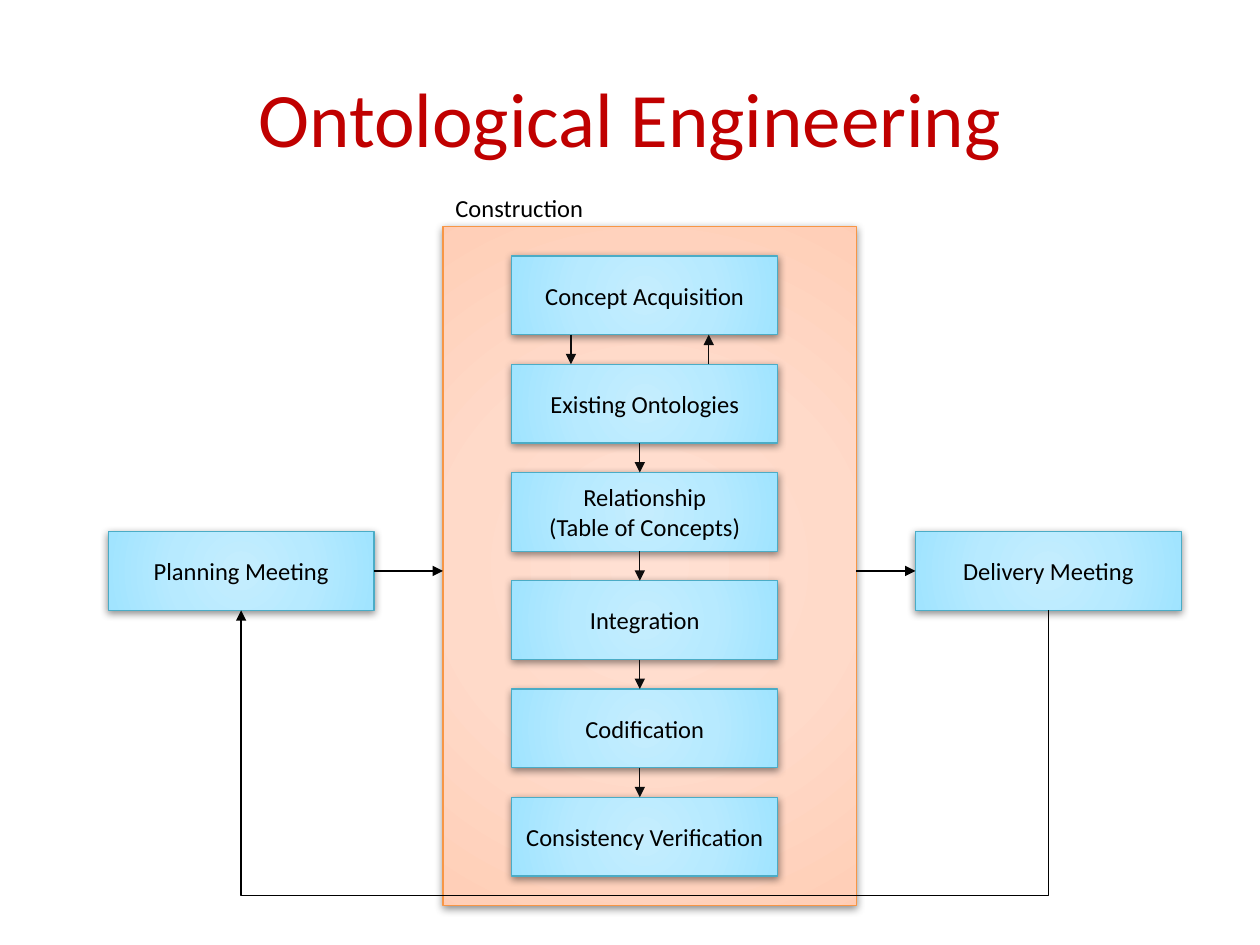
import pptx
import pptx.dml.color
import pptx.enum.shapes
import pptx.enum.text
import pptx.oxml
import pptx.oxml.ns
import pptx.util
import lxml.etree

# A grid of square cells, 128 columns by 96 rows, covers the slide
COLUMNS, ROWS = 128, 96
CELL = pptx.util.Inches(10) / COLUMNS
BOX_COLUMNS, BOX_ROWS, STEP_PITCH = 27, 8, 11
FONT = "Calibri"
BLUE_STOPS = [(0, "C5EDFE"), (50, "B7EAFF"), (97, "A1E4FF"), (100, "9BE3FF")]
PEACH_STOPS = [(0, "FFE0D3"), (50, "FFDAC9"), (97, "FFCFB8"), (100, "FFCBB3")]
STEPS = [
    ["Concept Acquisition"],
    ["Existing Ontologies"],
    ["Relationship", "(Table of Concepts)"],
    ["Integration"],
    ["Codification"],
    ["Consistency Verification"],
]


def grid(*cells):
    return [pptx.util.Emu(round(cell * CELL)) for cell in cells]


def color(value):
    return pptx.dml.color.RGBColor.from_string(value)


def add_child(parent, tag, **attributes):
    child = lxml.etree.SubElement(parent, pptx.oxml.ns.qn(tag))
    for name, value in attributes.items():
        child.set(name, str(value))
    return child


def set_line(shape, line_color):
    shape.line.color.rgb = color(line_color)
    shape.line.width = pptx.util.Pt(0.75)


def set_radial_fill(shape, stops):
    shape.fill.solid()
    properties = shape._element.spPr
    solid = properties.find(pptx.oxml.ns.qn("a:solidFill"))
    gradient = lxml.etree.Element(pptx.oxml.ns.qn("a:gradFill"), rotWithShape="1")
    stop_list = add_child(gradient, "a:gsLst")
    for position, value in stops:
        stop = add_child(stop_list, "a:gs", pos=position * 1000)
        add_child(stop, "a:srgbClr", val=value)
    path = add_child(gradient, "a:path", path="circle")
    add_child(path, "a:fillToRect", l=50000, t=50000, r=50000, b=50000)
    properties.replace(solid, gradient)


def set_soft_shadow(shape):
    shape.shadow.inherit = False
    effects = shape._element.spPr.find(pptx.oxml.ns.qn("a:effectLst"))
    shadow = add_child(effects, "a:outerShdw", blurRad=pptx.util.Pt(4.5),
                       dist=pptx.util.Pt(1.5), dir=5400000, algn="ctr", rotWithShape=0)
    add_child(add_child(shadow, "a:srgbClr", val="000000"), "a:alpha", val=43000)


def write_text(shape, lines, size, text_color, align):
    frame = shape.text_frame
    for index, line in enumerate(lines):
        paragraph = frame.add_paragraph() if index else frame.paragraphs[0]
        paragraph.alignment = align
        run = paragraph.add_run()
        run.text = line
        run.font.name = FONT
        run.font.size = pptx.util.Pt(size)
        run.font.color.rgb = color(text_color)


def add_panel(slide, box, stops, line_color):
    shape = slide.shapes.add_shape(pptx.enum.shapes.MSO_SHAPE.RECTANGLE, *grid(*box))
    set_radial_fill(shape, stops)
    set_line(shape, line_color)
    set_soft_shadow(shape)
    return shape


def add_box(slide, left, top, lines):
    shape = add_panel(slide, (left, top, BOX_COLUMNS, BOX_ROWS), BLUE_STOPS, "4BACC6")
    shape.text_frame.word_wrap = True
    shape.text_frame.vertical_anchor = pptx.enum.text.MSO_ANCHOR.MIDDLE
    write_text(shape, lines, 14, "000000", pptx.enum.text.PP_ALIGN.CENTER)
    return shape


def add_arrowhead(shape):
    add_child(shape.line._get_or_add_ln(), "a:tailEnd", type="triangle")


def add_arrow(slide, start, end, line_color):
    arrow = slide.shapes.add_connector(
        pptx.enum.shapes.MSO_CONNECTOR.STRAIGHT, *grid(*start, *end))
    set_line(arrow, line_color)
    add_arrowhead(arrow)
    add_child(arrow._element.spPr, "a:effectLst")
    return arrow


def add_title(slide, box):
    title = slide.shapes.add_textbox(*grid(*box))
    title.text_frame.word_wrap = True
    title.text_frame.vertical_anchor = pptx.enum.text.MSO_ANCHOR.MIDDLE
    write_text(title, ["Ontological Engineering"], 44, "C00000",
               pptx.enum.text.PP_ALIGN.CENTER)


def add_construction(slide, box):
    left, top, width, height = box
    add_panel(slide, box, PEACH_STOPS, "F79646")

    # Label above the panel
    label = slide.shapes.add_textbox(*grid(left, top - 4, 15.7, 4.3))
    label.text_frame.word_wrap = False
    write_text(label, ["Construction"], 14, "000000", pptx.enum.text.PP_ALIGN.LEFT)

    # Column of steps
    tops = [top + 3 + STEP_PITCH * index for index in range(len(STEPS))]
    for step_top, lines in zip(tops, STEPS):
        add_box(slide, left + 7, step_top, lines)

    # Two-way exchange between the first steps, then one arrow down each gap
    for index, next_top in enumerate(tops[1:]):
        bottom = tops[index] + BOX_ROWS
        if index == 0:
            add_arrow(slide, (left + 13, bottom), (left + 13, next_top), "0D0D0D")
            add_arrow(slide, (left + 27, next_top), (left + 27, bottom), "0D0D0D")
        else:
            add_arrow(slide, (left + 20, bottom), (left + 20, next_top), "0D0D0D")


def add_meetings(slide, planning_left, delivery_left, top, panel_left, panel_right):
    planning = add_box(slide, planning_left, top, ["Planning Meeting"])
    delivery = add_box(slide, delivery_left, top, ["Delivery Meeting"])

    # Arrows into and out of the construction panel
    middle = top + BOX_ROWS / 2
    inward = add_arrow(slide, (planning_left + BOX_COLUMNS, middle),
                       (panel_left, middle), "000000")
    inward.begin_connect(planning, 3)
    outward = add_arrow(slide, (panel_right, middle), (delivery_left, middle), "000000")
    outward.end_connect(delivery, 1)


def add_feedback_loop(slide, start_column, end_column, top, bottom):
    builder = slide.shapes.build_freeform(*grid(start_column, top))
    corners = [(start_column, bottom), (end_column, bottom), (end_column, top)]
    builder.add_line_segments([grid(*corner) for corner in corners], close=False)
    loop = builder.convert_to_shape()
    loop.fill.background()
    loop.shadow.inherit = False
    set_line(loop, "000000")
    add_arrowhead(loop)


def main():
    presentation = pptx.Presentation()
    presentation.slide_width, presentation.slide_height = grid(COLUMNS, ROWS)
    slide = presentation.slides.add_slide(presentation.slide_layouts[6])

    add_title(slide, (0.05 * COLUMNS, 0.04 * ROWS, 0.9 * COLUMNS, 16))
    add_construction(slide, (45, 23, 42, 69))
    add_meetings(slide, 11, 93, 54, 45, 87)
    add_feedback_loop(slide, 93 + BOX_COLUMNS / 2, 11 + BOX_COLUMNS / 2, 54 + BOX_ROWS, 91)

    presentation.save("out.pptx")


if __name__ == "__main__":
    main()
